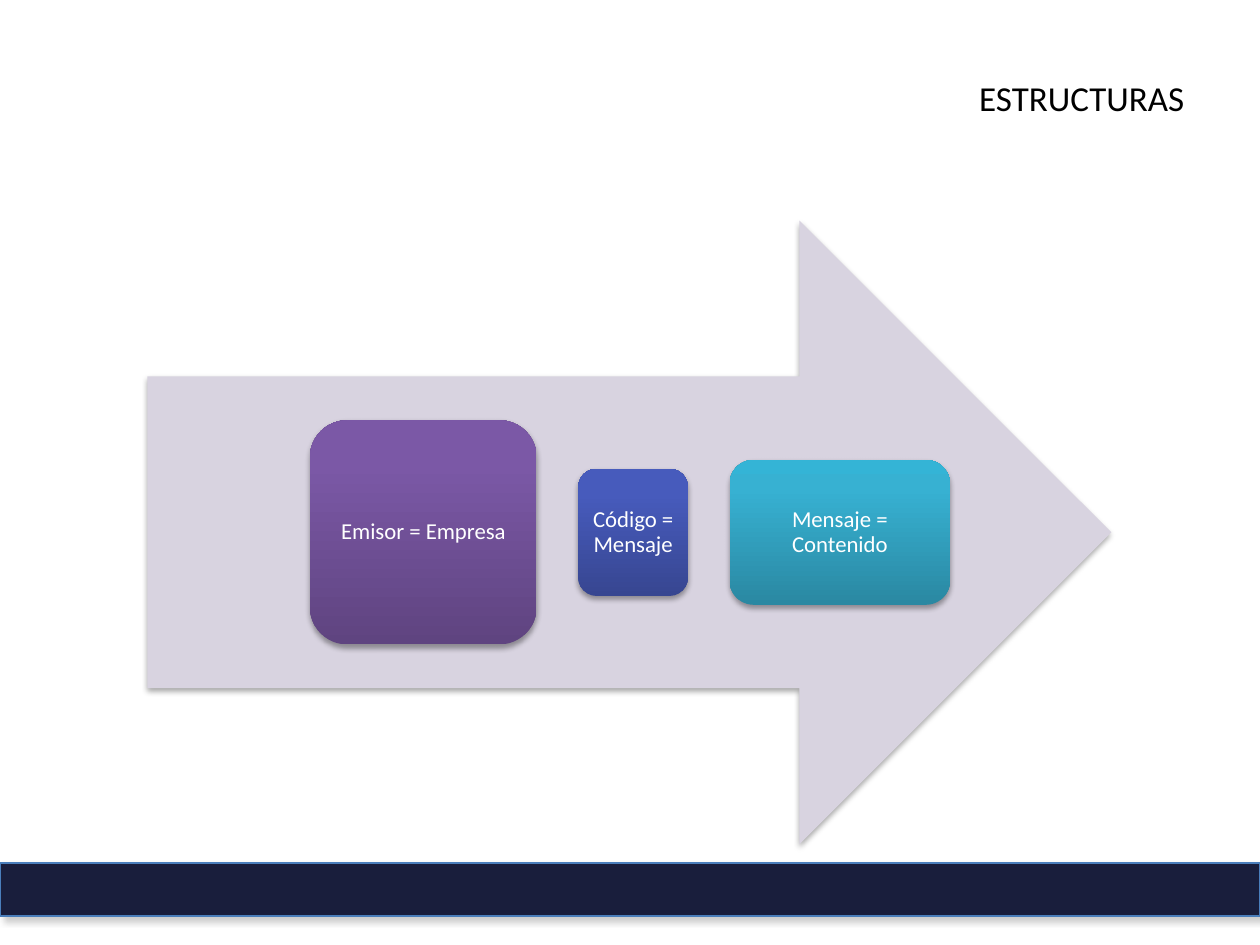
import pptx
import pptx.util
import pptx.dml.color
import pptx.enum.shapes
import pptx.enum.text
import pptx.oxml
import pptx.oxml.ns
from dataclasses import dataclass
from pptx.shapes.autoshape import Shape
from pptx.shapes.base import BaseShape

Pt = pptx.util.Pt
Kind = pptx.enum.shapes.MSO_SHAPE
Align = pptx.enum.text.PP_ALIGN
Anchor = pptx.enum.text.MSO_ANCHOR
qn = pptx.oxml.ns.qn
NS = pptx.oxml.ns.nsdecls("a")

# Slide grid: 100 columns by 75 rows
WIDE, HIGH = pptx.util.Inches(10), pptx.util.Inches(7.5)
COLS, ROWS = 100, 75


@dataclass(frozen=True)
class Theme:
    font: str = "Calibri"
    head: int = 20
    body: int = 13
    ink: str = "000000"
    light: str = "FFFFFF"
    arrow: str = "D8D3E0"
    bar: str = "191E3C"
    edge: str = "4A7EBB"


@dataclass(frozen=True)
class Box:
    col: float
    row: float
    cols: float
    rows: float


@dataclass(frozen=True)
class Shade:
    color: str
    alpha: int
    blur: float
    dist: float
    angle: int


@dataclass(frozen=True)
class Block:
    text: str
    cols: float
    rows: float
    tones: tuple[str, str, str]


THEME = Theme()
SOFT = Shade("000000", 35, 3.1, 1.8, 90)
CAST = Shade("808080", 40, 4, 3, 45)
TITLE = Box(5, 3, 90, 12.5)
ARROW = Box(11.7, 17.5, 76.5, 49.5)
BAR = Box(0, 68.5, COLS, 4.2)
START, GAP = 24.6, 3.3
STOPS = (0, 80, 100)
BLOCKS = (
    Block("Emisor = Empresa", 18, 17.8, ("5F4480", "7B58A6", "7C57A8")),
    Block("Código = Mensaje", 8.7, 10.1, ("374691", "475BBC", "455ABF")),
    Block("Mensaje = Contenido", 17.5, 11.5, ("2A88A2", "37B1D2", "34B4D6")),
)


def rgb(code: str) -> pptx.dml.color.RGBColor:
    return pptx.dml.color.RGBColor.from_string(code)


def place(shape: BaseShape, box: Box) -> None:
    spots = {
        "left": WIDE * box.col / COLS,
        "top": HIGH * box.row / ROWS,
        "width": WIDE * box.cols / COLS,
        "height": HIGH * box.rows / ROWS,
    }
    for name, value in spots.items():
        setattr(shape, name, round(value))


def cast(shape: Shape, shade: Shade) -> None:
    shape.shadow.inherit = False
    effects = shape._element.spPr.find(qn("a:effectLst"))
    effects.append(pptx.oxml.parse_xml(
        f'<a:outerShdw {NS} blurRad="{Pt(shade.blur)}" dist="{Pt(shade.dist)}" '
        f'dir="{shade.angle * 60000}" rotWithShape="0">'
        f'<a:srgbClr val="{shade.color}"><a:alpha val="{shade.alpha * 1000}"/>'
        f'</a:srgbClr></a:outerShdw>'))


def draw(slide, kind: Kind, box: Box, shade: Shade) -> Shape:
    shape = slide.shapes.add_shape(kind, 0, 0, 0, 0)
    place(shape, box)
    shape.line.fill.background()
    cast(shape, shade)
    return shape


def paint(shape: Shape, color: str) -> None:
    shape.fill.solid()
    shape.fill.fore_color.rgb = rgb(color)


def blend(shape: Shape, tones: tuple[str, str, str]) -> None:
    shape.fill.gradient()
    shape.fill.gradient_angle = 90
    stops = shape._element.spPr.find(".//" + qn("a:gsLst"))
    for old in list(stops):
        stops.remove(old)
    for pos, tone in zip(STOPS, tones):
        stops.append(pptx.oxml.parse_xml(
            f'<a:gs {NS} pos="{pos * 1000}"><a:srgbClr val="{tone}"/></a:gs>'))


def write(shape: Shape, text: str, size: int, color: str, align: Align,
          frame: dict, space: float = 1) -> None:
    body = shape.text_frame
    body.text = text
    for name, value in {"word_wrap": True, "vertical_anchor": Anchor.MIDDLE,
                        **frame}.items():
        setattr(body, name, value)
    para = body.paragraphs[0]
    para.alignment, para.line_spacing = align, space
    font = para.runs[0].font
    for name, value in {"name": THEME.font, "size": Pt(size)}.items():
        setattr(font, name, value)
    font.color.rgb = rgb(color)


def main() -> None:
    deck = pptx.Presentation()
    deck.slide_width, deck.slide_height = WIDE, HIGH
    slide = deck.slides.add_slide(deck.slide_layouts[5])

    # Title, lifted above the middle by its bottom inset
    title = slide.shapes.title
    place(title, TITLE)
    write(title, "ESTRUCTURAS", THEME.head, THEME.ink, Align.RIGHT,
          {"margin_bottom": pptx.util.Inches(0.35)})

    # Arrow behind the blocks
    paint(draw(slide, Kind.RIGHT_ARROW, ARROW, SOFT), THEME.arrow)

    # Blocks in a row, centred on the arrow's axis
    sides = ("left", "top", "right", "bottom")
    inset = {f"margin_{side}": pptx.util.Inches(0.05) for side in sides}
    axis = ARROW.row + ARROW.rows / 2
    col = START
    for block in BLOCKS:
        box = Box(col, axis - block.rows / 2, block.cols, block.rows)
        shape = draw(slide, Kind.ROUNDED_RECTANGLE, box, SOFT)
        blend(shape, block.tones)
        write(shape, block.text, THEME.body, THEME.light, Align.CENTER,
              inset, 0.9)
        col += block.cols + GAP

    # Footer bar
    bar = draw(slide, Kind.RECTANGLE, BAR, CAST)
    paint(bar, THEME.bar)
    bar.line.color.rgb = rgb(THEME.edge)
    bar.line.width = Pt(0.75)

    deck.save("out.pptx")


if __name__ == "__main__":
    main()
